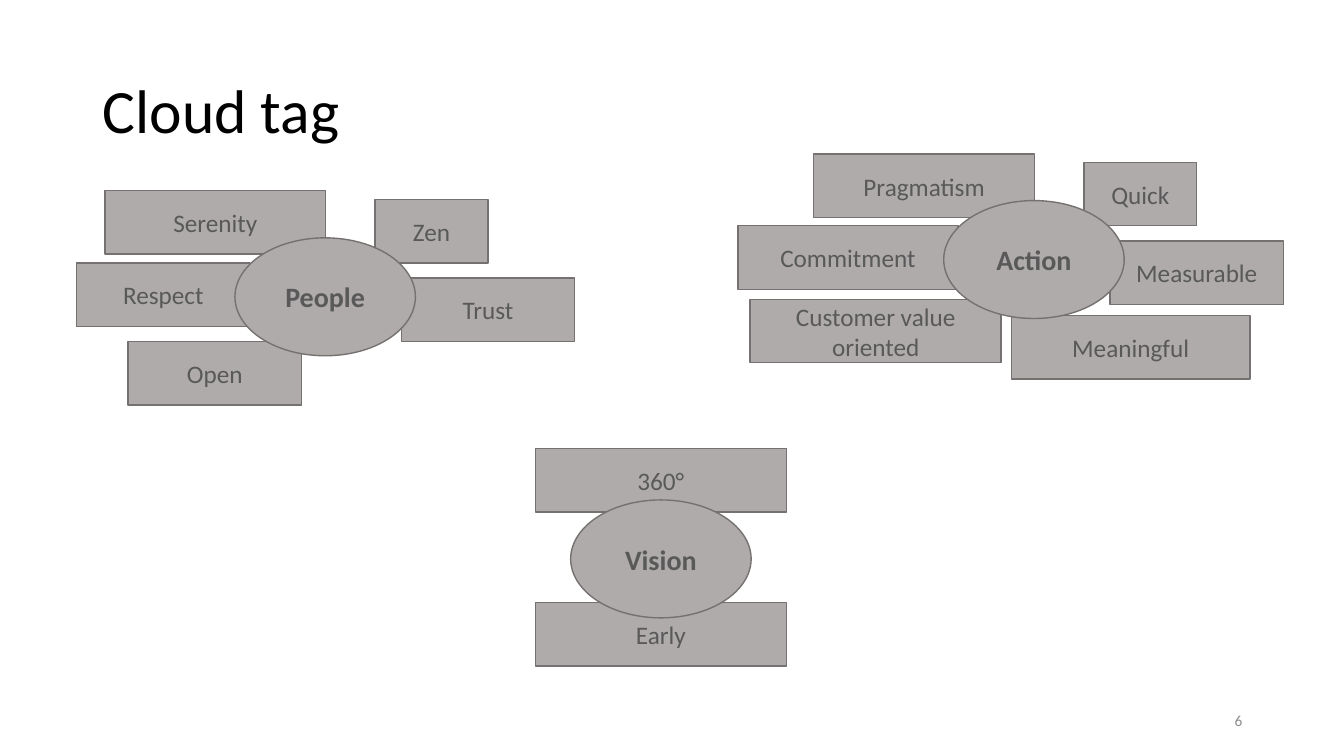
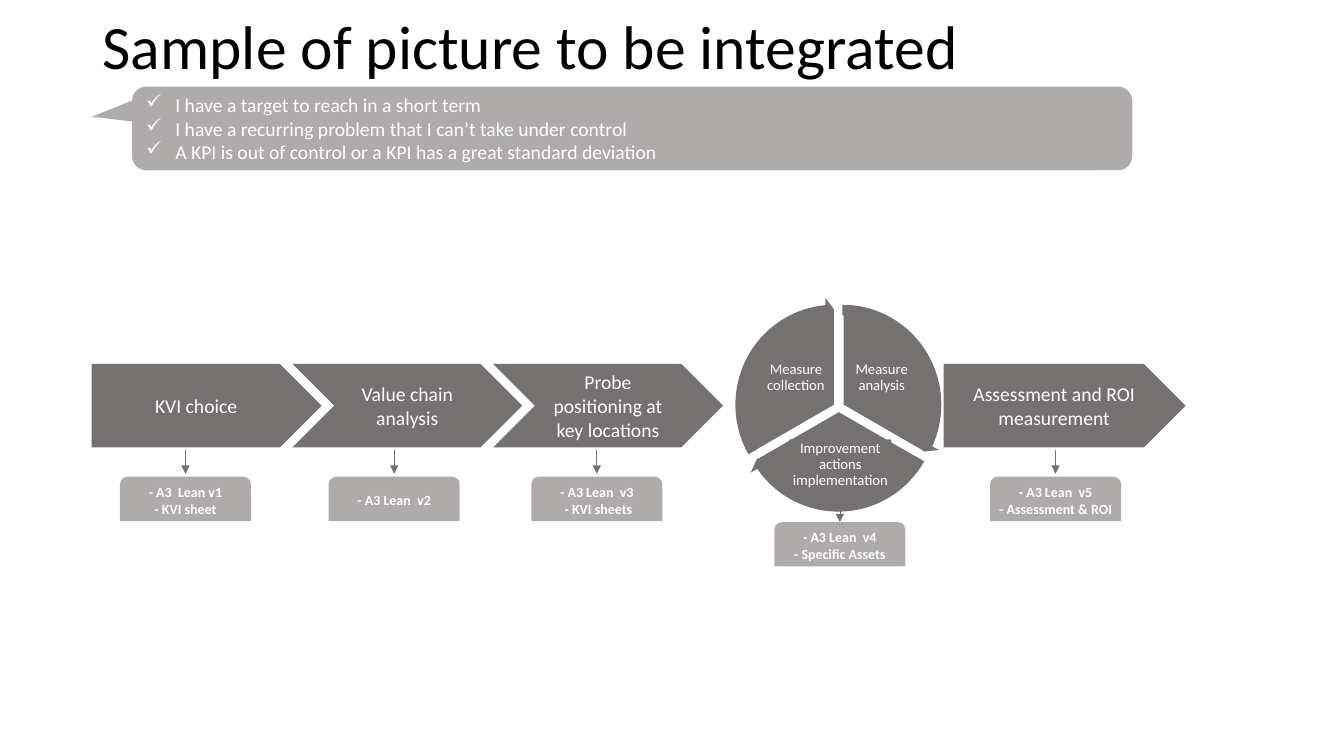
"""Build two slides: a value cloud and a lean improvement process."""
from lxml.etree import SubElement
from pptx import Presentation
from pptx.dml.color import RGBColor
from pptx.enum.shapes import MSO_CONNECTOR, MSO_SHAPE
from pptx.enum.text import MSO_ANCHOR, PP_ALIGN
from pptx.oxml.ns import qn
from pptx.util import Inches, Pt

BLACK = RGBColor(0x00, 0x00, 0x00)
WHITE = RGBColor(0xFF, 0xFF, 0xFF)
INK = RGBColor(0x59, 0x59, 0x59)
LIGHT_GREY = RGBColor(0xAF, 0xAB, 0xAB)
DARK_GREY = RGBColor(0x76, 0x71, 0x71)
FOOTER_GREY = RGBColor(0x8C, 0x8C, 0x8C)
FONT = "Calibri"

TAG_HEIGHT = 0.63
HUB_SIZE = (1.79, 1.17)
CLOUDS = [
    ("People", 2.33, 2.36, [
        ("Zen", 3.72, 1.98, 1.12), ("Trust", 3.98, 2.76, 1.72),
        ("Respect", 0.76, 2.61, 1.72), ("Open", 1.27, 3.39, 1.72),
        ("Serenity", 1.04, 1.89, 2.19)]),
    ("Action", 9.36, 1.99, [
        ("Quick", 10.75, 1.61, 1.12), ("Measurable", 11.01, 2.39, 1.72),
        ("Commitment", 7.32, 2.24, 2.18),
        ("Customer value oriented", 7.44, 2.97, 2.49),
        ("Meaningful", 10.03, 3.13, 2.37), ("Pragmatism", 8.07, 1.53, 2.19)]),
    ("Vision", 5.66, 4.96, [
        ("Early", 5.31, 5.98, 2.49), ("360°", 5.31, 4.45, 2.49)]),
]

TRIGGERS = [
    "I have a target to reach in a short term",
    "I have a recurring problem that I can’t take under control",
    "A KPI is out of control or a KPI has a great standard deviation",
]
STEP_TOP, STEP_HEIGHT = 3.61, 0.83
FIRST_STEP_LEFT, STEP_PITCH, STEP_WIDTH = 0.91, 1.99, 2.28
FIRST_STEPS = [
    ("KVI choice", MSO_SHAPE.PENTAGON),
    ("Value chain analysis", MSO_SHAPE.CHEVRON),
    ("Probe positioning at key locations", MSO_SHAPE.CHEVRON),
]
STEPS = [(text, kind, FIRST_STEP_LEFT + i * STEP_PITCH, STEP_WIDTH)
         for i, (text, kind) in enumerate(FIRST_STEPS)]
STEPS.append(("Assessment and ROI measurement", MSO_SHAPE.PENTAGON, 9.36, 2.4))

OUTPUT_WIDTH, OUTPUT_HEIGHT = 1.3, 0.44
OUTPUTS = [
    (["- A3  Lean v1", "- KVI sheet"], 1.19, 4.73, 4.46, 4.7),
    (["- A3 Lean  v2"], 3.26, 4.73, 4.46, 4.7),
    (["- A3 Lean  v3", " - KVI sheets"], 5.27, 4.73, 4.46, 4.7),
    (["- A3 Lean  v4", "- Specific Assets"], 7.68, 5.18, 5.06, 5.18),
    (["- A3 Lean  v5", "- Assessment & ROI"], 9.82, 4.73, 4.46, 4.7),
]

SECTOR_SIZE = (1.88, 1.9)
SECTORS = [
    ("Measure analysis", (8.41, 3.47, 0.67, 0.56), (7.42, 3.07), (162, 18)),
    ("Improvement actions implementation", (7.83, 4.36, 1.01, 0.5),
     (7.38, 3.13), (18, 90)),
    ("Measure collection", (7.56, 3.47, 0.67, 0.56), (7.34, 3.07), (90, 162)),
]
ROTATION_SIZE = (2.11, 2.13)
ROTATIONS = [((7.3, 2.95), 14.73, 161.99), ((7.26, 3.02), 86.72, 18),
             ((7.22, 2.95), 158.73, 90)]


def write(shape, text, size=18, color=INK, bold=False, align=PP_ALIGN.CENTER,
          spacing=None, inset=None, bullet=None):
    """Write one string, or a list with a string per paragraph, into a shape."""
    frame = shape.text_frame
    frame.word_wrap = True
    frame.vertical_anchor = MSO_ANCHOR.MIDDLE
    if inset is not None:
        frame.margin_left = frame.margin_right = Inches(inset)
        frame.margin_top = frame.margin_bottom = Inches(inset)
    lines = [text] if isinstance(text, str) else text
    for i, line in enumerate(lines):
        paragraph = frame.add_paragraph() if i else frame.paragraphs[0]
        paragraph.alignment = align
        if spacing:
            paragraph.line_spacing = spacing
        if bullet:
            properties = paragraph._p.get_or_add_pPr()
            properties.set("marL", str(Inches(0.29)))
            properties.set("indent", str(Inches(-0.29)))
            SubElement(properties, qn("a:buChar")).set("char", bullet)
        run = paragraph.add_run()
        run.text = line
        run.font.name, run.font.size = FONT, Pt(size)
        run.font.bold, run.font.color.rgb = bold, color


def add_block(shapes, kind, box, fill, outline=None, adjustments=()):
    """Add a flat preset shape."""
    block = shapes.add_shape(kind, *map(Inches, box))
    block.shadow.inherit = False
    block.fill.solid()
    block.fill.fore_color.rgb = fill
    if outline is None:
        block.line.fill.background()
    else:
        block.line.color.rgb = outline
        block.line.width = Pt(1)
    for i, value in enumerate(adjustments):
        block.adjustments[i] = value
    return block


def add_label(slide, text, box, **style):
    """Add a text box."""
    write(slide.shapes.add_textbox(*map(Inches, box)), text, **style)


def add_arrow(slide, x, top, bottom):
    """Add a thin arrow that points down."""
    arrow = slide.shapes.add_connector(
        MSO_CONNECTOR.STRAIGHT, *map(Inches, (x, top, x, bottom)))
    arrow.line.color.rgb = DARK_GREY
    arrow.line.width = Pt(0.5)
    SubElement(arrow.line._get_or_add_ln(), qn("a:tailEnd")).set("type", "triangle")
    SubElement(arrow._element.spPr, qn("a:effectLst"))


def add_titled_slide(deck, title, top):
    """Add a blank slide with the shared title style."""
    slide = deck.slides.add_slide(deck.slide_layouts[6])
    add_label(slide, title, (0.92, top, 11.5, 1.45), size=44, color=BLACK,
              align=PP_ALIGN.LEFT, spacing=0.9)
    return slide


def build_clouds(deck):
    """Build the three tag clouds."""
    slide = add_titled_slide(deck, "Cloud tag", 0.4)
    add_label(slide, "6", (9.42, 6.95, 3, 0.4), size=11, color=FOOTER_GREY,
              align=PP_ALIGN.RIGHT)
    for theme, left, top, tags in CLOUDS:
        for tag, tag_left, tag_top, width in tags:
            write(add_block(slide.shapes, MSO_SHAPE.RECTANGLE,
                            (tag_left, tag_top, width, TAG_HEIGHT),
                            LIGHT_GREY, DARK_GREY), tag)
        hub = add_block(slide.shapes, MSO_SHAPE.OVAL, (left, top, *HUB_SIZE),
                        LIGHT_GREY, DARK_GREY)
        write(hub, theme, size=20, bold=True)


def build_process(deck):
    """Build the process chain with its improvement cycle."""
    slide = add_titled_slide(deck, "Sample of picture to be integrated", -0.23)
    callout = add_block(slide.shapes, MSO_SHAPE.ROUNDED_RECTANGULAR_CALLOUT,
                        (1.31, 0.86, 9.92, 0.83), LIGHT_GREY,
                        adjustments=(-0.54, -0.14, 0.17))
    write(callout, TRIGGERS, size=14, color=WHITE, align=PP_ALIGN.LEFT, bullet="✓")

    for text, kind, left, width in STEPS:
        step = add_block(slide.shapes, kind, (left, STEP_TOP, width, STEP_HEIGHT),
                         DARK_GREY)
        write(step, text, size=14, color=WHITE)

    for lines, left, top, arrow_top, arrow_bottom in OUTPUTS:
        output = add_block(slide.shapes, MSO_SHAPE.ROUND_2_SAME_RECTANGLE,
                           (left, top, OUTPUT_WIDTH, OUTPUT_HEIGHT), LIGHT_GREY)
        write(output, lines, size=10, color=WHITE, bold=True, inset=0)
        add_arrow(slide, left + OUTPUT_WIDTH / 2, arrow_top, arrow_bottom)

    cycle = slide.shapes.add_group_shape().shapes
    for text, caption_box, corner, angles in SECTORS:
        add_block(cycle, MSO_SHAPE.PIE, (*corner, *SECTOR_SIZE), DARK_GREY, WHITE,
                  angles)
        caption = add_block(cycle, MSO_SHAPE.RECTANGLE, caption_box, DARK_GREY)
        write(caption, text, size=10.5, color=WHITE, spacing=0.9, inset=0.03)
    for corner, end, start in ROTATIONS:
        add_block(cycle, MSO_SHAPE.CIRCULAR_ARROW, (*corner, *ROTATION_SIZE),
                  DARK_GREY, adjustments=(0.05, 3.28, end, start, 0.06))


def main():
    """Build and save the deck."""
    deck = Presentation()
    deck.slide_width, deck.slide_height = Inches(13.33), Inches(7.5)
    build_clouds(deck)
    build_process(deck)
    deck.save("out.pptx")


if __name__ == "__main__":
    main()
